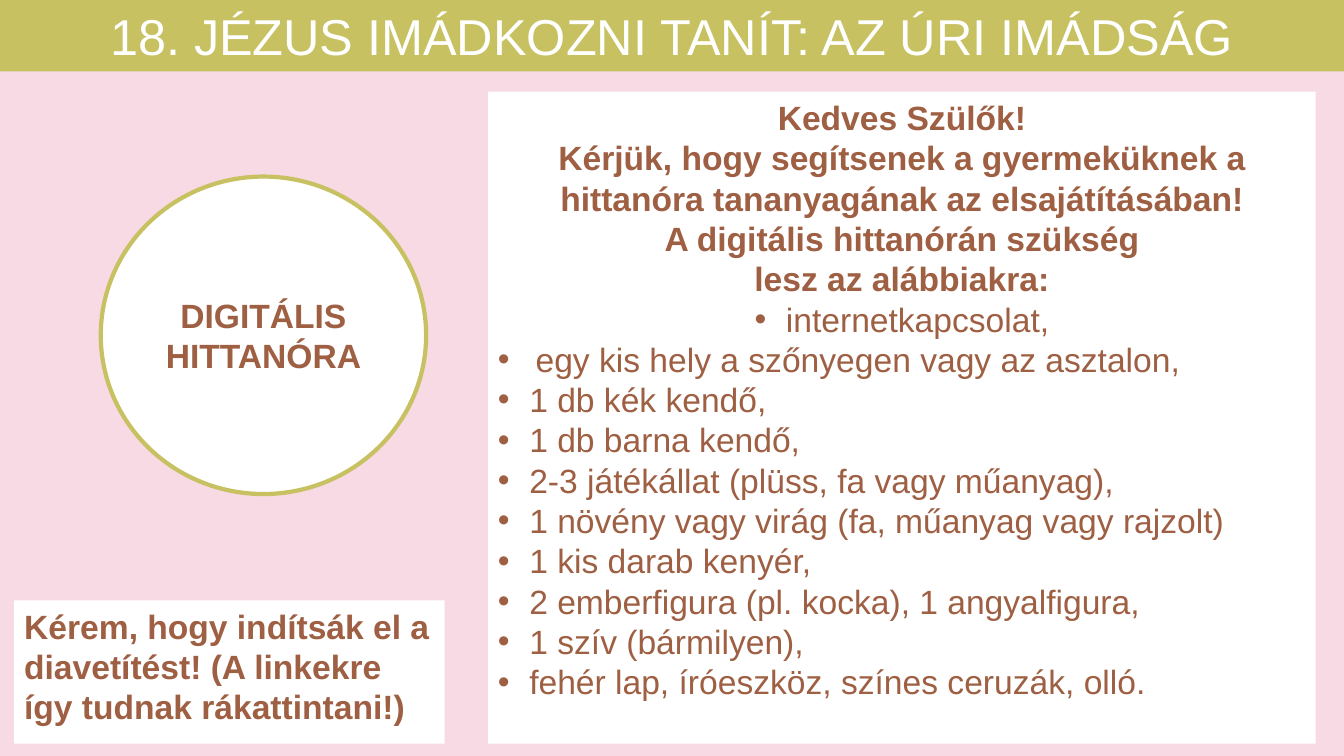
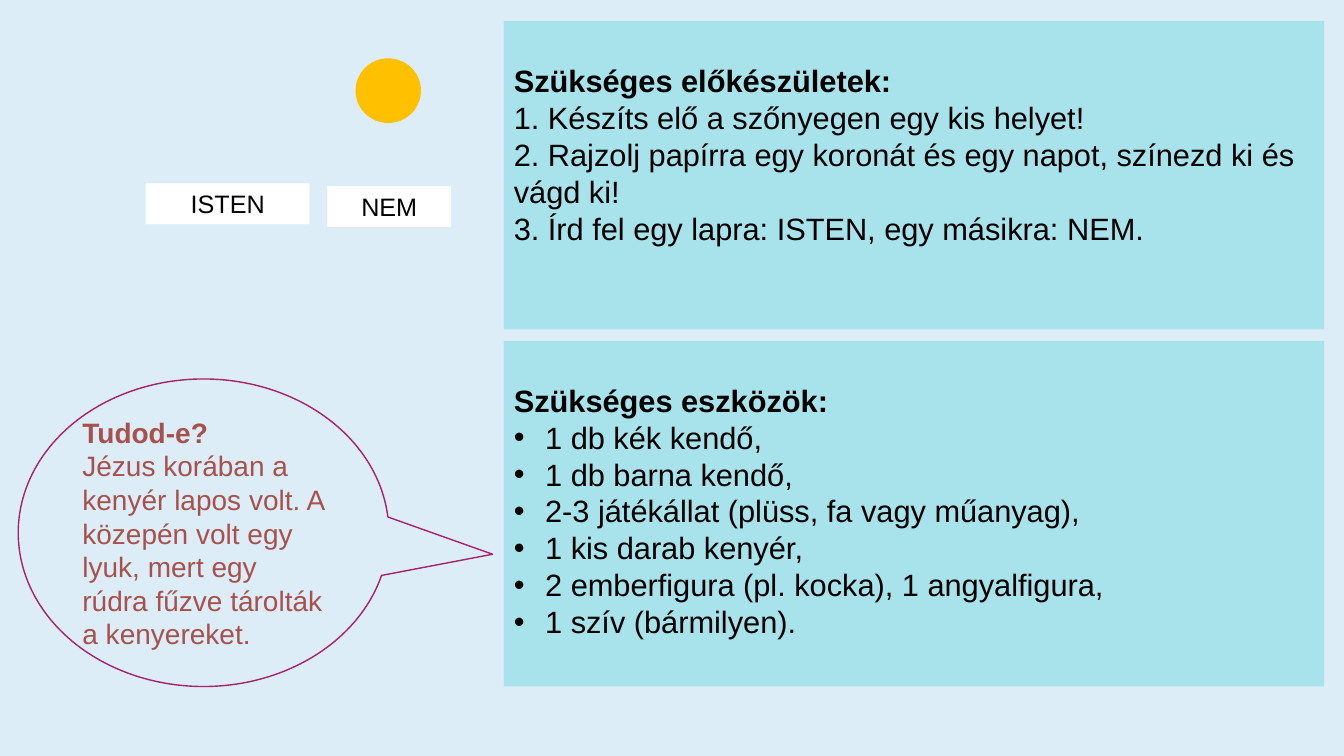
from lxml import etree
from pptx import Presentation
from pptx import util as u
from pptx.dml import color
from pptx.enum import shapes, text
from pptx.oxml import ns

FONT = "Arial"
OLIVE, PINK, BROWN = "C7C161", "F7DAE3", "9E5F43"
PALE_BLUE, AQUA, SUN = "DCEDF8", "A8E2EA", "FFC000"
PURPLE, RED = "A8216B", "A8504C"
WHITE, BLACK = "FFFFFF", "000000"
LEFT, CENTER = text.PP_ALIGN.LEFT, text.PP_ALIGN.CENTER
TOP, MIDDLE = text.MSO_ANCHOR.TOP, text.MSO_ANCHOR.MIDDLE
PRESET = shapes.MSO_SHAPE
BULLET = 0.79
EMPTY_LINE = 1.02


def rgb(value):
    return color.RGBColor.from_string(value)


def add_box(slide, preset, place, fill=None, line=None, line_width=1, paragraphs=(),
            size=24, ink=BROWN, anchor=TOP, top=0.13):
    shape = slide.shapes.add_shape(preset, *[u.Cm(length) for length in place])
    shape.shadow.inherit = False
    if fill:
        shape.fill.solid()
        shape.fill.fore_color.rgb = rgb(fill)
    else:
        shape.fill.background()
    if line:
        shape.line.color.rgb = rgb(line)
        shape.line.width = u.Pt(line_width)
    else:
        shape.line.fill.background()
    frame = shape.text_frame
    frame.word_wrap = True
    frame.vertical_anchor = anchor
    frame.margin_top = u.Cm(top)
    for index, (content, bold, align, indent) in enumerate(paragraphs):
        paragraph = frame.add_paragraph() if index else frame.paragraphs[0]
        paragraph.text = content
        paragraph.alignment = align
        if indent:
            properties = paragraph._p.get_or_add_pPr()
            properties.set("marL", str(u.Cm(indent)))
            properties.set("indent", str(-u.Cm(indent)))
            etree.SubElement(properties, ns.qn("a:buFont")).set("typeface", FONT)
            etree.SubElement(properties, ns.qn("a:buChar")).set("char", "•")
        paragraph.font.name = FONT
        paragraph.font.size = u.Pt(size)
        paragraph.font.bold = bold
        paragraph.font.color.rgb = rgb(ink)
    return shape


presentation = Presentation()
presentation.slide_width = u.Cm(33.87)
presentation.slide_height = u.Cm(19.05)
slides = []
for background in (PINK, PALE_BLUE):
    slide = presentation.slides.add_slide(presentation.slide_layouts[6])
    slide.background.fill.solid()
    slide.background.fill.fore_color.rgb = rgb(background)
    slides.append(slide)
parents_slide, preparation_slide = slides

add_box(parents_slide, PRESET.RECTANGLE, (0, 0, 33.87, 1.8), OLIVE, size=36, ink=WHITE,
        paragraphs=[("18. JÉZUS IMÁDKOZNI TANÍT: AZ ÚRI IMÁDSÁG", False, CENTER, 0)])
add_box(parents_slide, PRESET.OVAL, (2.54, 4.45, 8.2, 8), WHITE, OLIVE, 3, anchor=MIDDLE,
        paragraphs=[("DIGITÁLIS HITTANÓRA", True, CENTER, 0)])

greeting = [
    "Kedves Szülők!",
    "Kérjük, hogy segítsenek a gyermeküknek a hittanóra tananyagának az elsajátításában!",
    "A digitális hittanórán szükség",
    "lesz az alábbiakra:",
]
needs = [
    "1 db kék kendő,",
    "1 db barna kendő,",
    "2-3 játékállat (plüss, fa vagy műanyag),",
    "1 növény vagy virág (fa, műanyag vagy rajzolt)",
    "1 kis darab kenyér,",
    "2 emberfigura (pl. kocka), 1 angyalfigura,",
    "1 szív (bármilyen),",
    "fehér lap, íróeszköz, színes ceruzák, olló.",
]
add_box(parents_slide, PRESET.RECTANGLE, (12.3, 2.31, 20.86, 16.43), WHITE,
        paragraphs=[(line, True, CENTER, 0) for line in greeting]
        + [("internetkapcsolat,", False, CENTER, BULLET),
           ("egy kis hely a szőnyegen vagy az asztalon,", False, LEFT, 0.95)]
        + [(need, False, LEFT, BULLET) for need in needs])
add_box(parents_slide, PRESET.RECTANGLE, (0.36, 15.13, 10.85, 3.61), WHITE,
        paragraphs=[("Kérem, hogy indítsák el a diavetítést! "
                     "(A linkekre így tudnak rákattintani!)", True, LEFT, 0)])

steps = [
    "1. Készíts elő a szőnyegen egy kis helyet!",
    "2. Rajzolj papírra egy koronát és egy napot, színezd ki és vágd ki!",
    "3. Írd fel egy lapra: ISTEN, egy másikra: NEM.",
]
tools = needs[:3] + needs[4:6] + ["1 szív (bármilyen)."]
panels = [
    (0.53, 7.77, "Szükséges előkészületek:", steps, 0),
    (8.59, 8.71, "Szükséges eszközök:", tools, BULLET),
]
for panel_top, height, heading, lines, indent in panels:
    add_box(preparation_slide, PRESET.RECTANGLE, (12.7, panel_top, 20.67, height), AQUA,
            size=22, ink=BLACK, top=EMPTY_LINE,
            paragraphs=[(heading, True, LEFT, 0)]
            + [(line, False, LEFT, indent) for line in lines])

for word, left, card_top, width in (("NEM", 8.25, 4.69, 3.12), ("ISTEN", 3.68, 4.62, 4.12)):
    add_box(preparation_slide, PRESET.RECTANGLE, (left, card_top, width, 1.03), WHITE,
            size=18, ink=BLACK, paragraphs=[(word, False, CENTER, 0)])
add_box(preparation_slide, PRESET.FLOWCHART_CONNECTOR, (8.96, 1.47, 1.65, 1.63), SUN)

callout = add_box(preparation_slide, PRESET.OVAL_CALLOUT, (0.46, 9.55, 9.34, 7.75),
                  line=PURPLE, size=20, ink=RED, anchor=MIDDLE,
                  paragraphs=[("Tudod-e?", True, LEFT, 0),
                              ("Jézus korában a kenyér lapos volt. A közepén volt egy lyuk, "
                               "mert egy rúdra fűzve tárolták a kenyereket.", False, LEFT, 0)])
callout.adjustments[0] = 0.78
callout.adjustments[1] = 0.07

presentation.save("out.pptx")
